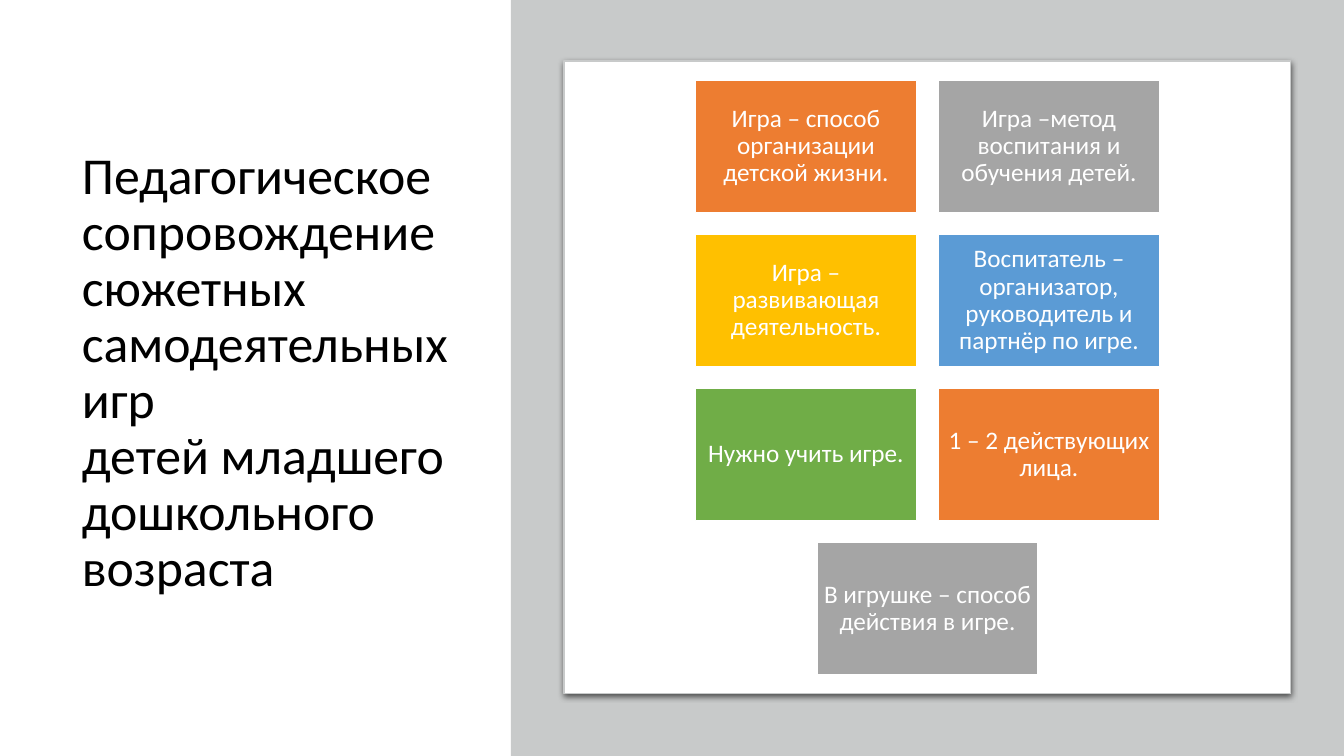
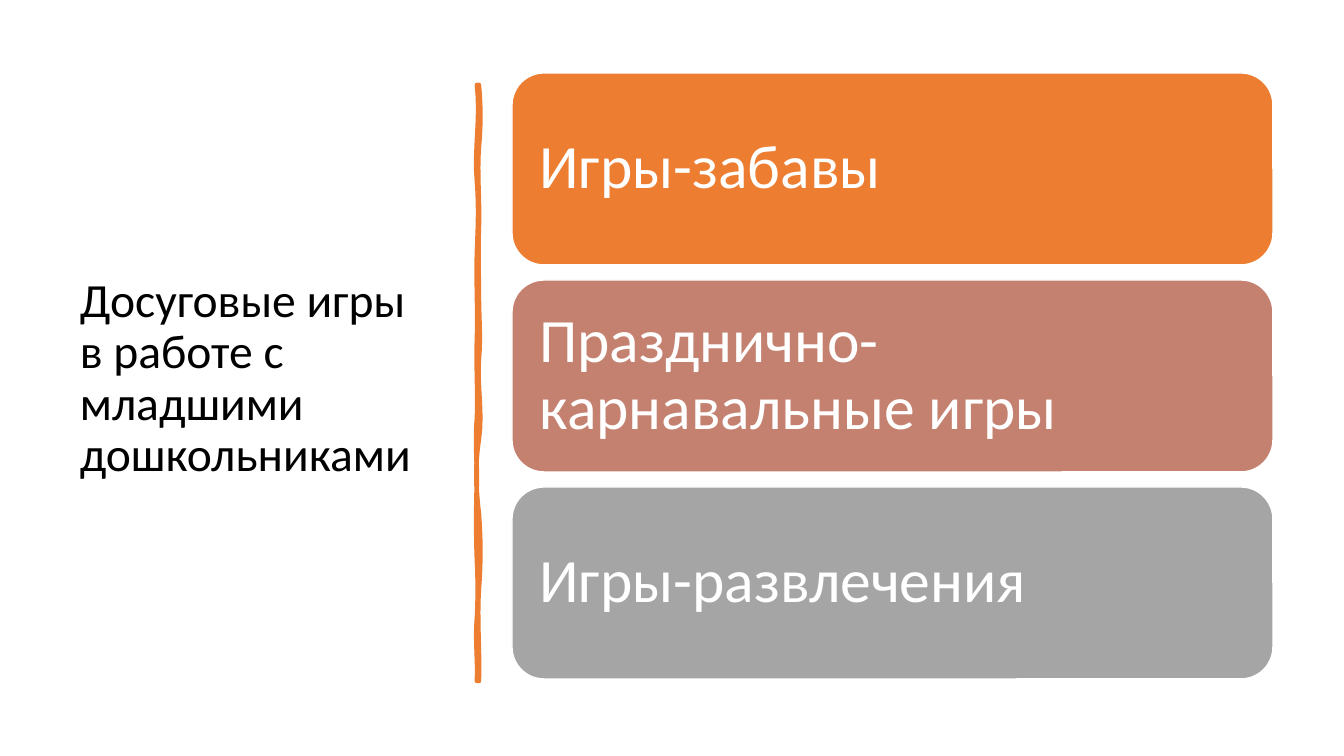
from dataclasses import dataclass

from lxml.etree import SubElement
from pptx import Presentation
from pptx.dml.color import RGBColor
from pptx.enum.shapes import MSO_SHAPE
from pptx.enum.text import MSO_ANCHOR, PP_ALIGN
from pptx.oxml.ns import qn
from pptx.util import Pt

PAGE_WIDTH, PAGE_HEIGHT = 1344, 756
SCALE = 12192000 / PAGE_WIDTH


@dataclass(frozen=True)
class Theme:
    font: str = "Calibri"
    ink: str = "000000"
    white: str = "FFFFFF"
    panel: str = "C8CACA"
    orange: str = "ED7D31"
    gray: str = "A5A5A5"
    gold: str = "FFC000"
    blue: str = "5B9BD5"
    green: str = "70AD47"
    clay: str = "C48170"
    tile_size: int = 18
    bar_size: int = 44
    line_spacing: float = 0.9


THEME = Theme()

PLAY_TITLE = (
    "Педагогическое сопровождение \vсюжетных самодеятельных игр \v"
    "детей младшего дошкольного возраста"
)
PLAY_ROWS = [
    [("Игра – способ организации детской жизни.", THEME.orange),
     ("Игра –метод воспитания и обучения детей.", THEME.gray)],
    [("Игра – развивающая деятельность.", THEME.gold),
     ("Воспитатель – организатор, руководитель и партнёр по игре.", THEME.blue)],
    [("Нужно учить игре.", THEME.green),
     ("1 – 2 действующих лица.", THEME.orange)],
    [("В игрушке – способ действия в игре.", THEME.gray)],
]
PANEL_LEFT = 511
CARD = (564, 61, 727, 633)
TILE_WIDTH, TILE_HEIGHT, TILE_GAP = 221, 132, 22

LEISURE_TITLE = "Досуговые игры \vв работе с младшими дошкольниками"
LEISURE_BARS = [
    ("Игры-забавы", THEME.orange),
    ("Празднично-карнавальные игры", THEME.clay),
    ("Игры-развлечения", THEME.gray),
]
BAR_LEFT, BAR_TOP, BAR_WIDTH, BAR_HEIGHT, BAR_GAP = 512, 73, 761, 192, 15

STROKE_TOP, STROKE_BOTTOM = 85, 681
RIGHT_EDGE = (479, STROKE_TOP, [
    (481, 481, 147), (477, 480, 228), (478, 479, 296), (479, 481, 359),
    (477, 483, 439), (475, 476, 514), (481, 481, 589), (477, 480, STROKE_BOTTOM),
])
LEFT_EDGE = (477, STROKE_BOTTOM, [
    (478, 475, 618), (478, 478, 561), (476, 476, 481), (477, 475, 418),
    (478, 476, 338), (478, 476, 252), (478, 479, 182), (474, 481, STROKE_TOP),
])
CURVE_STEPS = 8


def px(length):
    return round(length * SCALE)


def color(code):
    return RGBColor.from_string(code)


def write(shape, text, size, ink, inset=None, align=PP_ALIGN.LEFT):
    frame = shape.text_frame
    frame.word_wrap = True
    frame.vertical_anchor = MSO_ANCHOR.MIDDLE
    if inset is not None:
        frame.margin_left = frame.margin_right = px(inset)
        frame.margin_top = frame.margin_bottom = px(inset)
    frame.text = text
    for para in frame.paragraphs:
        para.alignment = align
        para.line_spacing = THEME.line_spacing
        for span in para.runs:
            span.font.name = THEME.font
            span.font.size = Pt(size)
            span.font.color.rgb = color(ink)


def style(shape, fill, line=None, line_width=1):
    shape.shadow.inherit = False
    shape.fill.solid()
    shape.fill.fore_color.rgb = color(fill)
    if line:
        shape.line.color.rgb = color(line)
        shape.line.width = Pt(line_width)
    else:
        shape.line.fill.background()


def add_block(page, kind, place, fill, line=None, line_width=1):
    block = page.shapes.add_shape(kind, *map(px, place))
    style(block, fill, line, line_width)
    return block


def add_title(page, place, text, size):
    box = page.shapes.add_textbox(*map(px, place))
    write(box, text, size, THEME.ink)


def add_card_shadow(shape):
    effects = shape.element.spPr.find(qn("a:effectLst"))
    shadow = SubElement(effects, qn("a:outerShdw"), blurRad=str(Pt(4.5)),
                        dist=str(Pt(1.5)), dir="5400000", algn="t", rotWithShape="0")
    tint = SubElement(shadow, qn("a:srgbClr"), val=THEME.ink)
    SubElement(tint, qn("a:alpha"), val="63000")


def edge_points(edge):
    x, y, segments = edge
    points = [(px(x), px(y))]
    for first, second, end in segments:
        for step in range(1, CURVE_STEPS + 1):
            t = step / CURVE_STEPS
            bend = 3 * t * (1 - t) * ((1 - t) * (first - x) + t * (second - x))
            points.append((px(x + bend), px(y + (end - y) * t)))
        y = end
    return points


def add_brush_stroke(page):
    start, *points = edge_points(RIGHT_EDGE) + edge_points(LEFT_EDGE)
    builder = page.shapes.build_freeform(*start, scale=1.0)
    builder.add_line_segments(points, close=True)
    style(builder.convert_to_shape(), THEME.orange, THEME.orange, 3.25)


def build_play_page(page):
    add_title(page, (72, 70, 404, 607), PLAY_TITLE, 37)
    add_block(page, MSO_SHAPE.RECTANGLE,
              (PANEL_LEFT, 0, PAGE_WIDTH - PANEL_LEFT, PAGE_HEIGHT), THEME.panel)
    card = add_block(page, MSO_SHAPE.RECTANGLE, CARD, THEME.white, THEME.panel, 0.75)
    add_card_shadow(card)

    left, top, width, height = CARD
    row_step, column_step = TILE_HEIGHT + TILE_GAP, TILE_WIDTH + TILE_GAP
    grid_top = top + (height - len(PLAY_ROWS) * row_step + TILE_GAP) / 2
    for row, tiles in enumerate(PLAY_ROWS):
        row_left = left + (width - len(tiles) * column_step + TILE_GAP) / 2
        for column, (text, fill) in enumerate(tiles):
            place = (row_left + column * column_step, grid_top + row * row_step,
                     TILE_WIDTH, TILE_HEIGHT)
            tile = add_block(page, MSO_SHAPE.RECTANGLE, place, fill, THEME.white)
            write(tile, text, THEME.tile_size, THEME.white, 7, PP_ALIGN.CENTER)


def build_leisure_page(page):
    add_title(page, (70, 71, 377, 616), LEISURE_TITLE, 34)
    add_brush_stroke(page)
    for index, (text, fill) in enumerate(LEISURE_BARS):
        place = (BAR_LEFT, BAR_TOP + index * (BAR_HEIGHT + BAR_GAP), BAR_WIDTH, BAR_HEIGHT)
        bar = add_block(page, MSO_SHAPE.ROUNDED_RECTANGLE, place, fill, THEME.white)
        write(bar, text, THEME.bar_size, THEME.white, 18)


def main():
    deck = Presentation()
    deck.slide_width, deck.slide_height = px(PAGE_WIDTH), px(PAGE_HEIGHT)
    blank = deck.slide_layouts[6]
    for build in (build_play_page, build_leisure_page):
        build(deck.slides.add_slide(blank))
    deck.save("out.pptx")


if __name__ == "__main__":
    main()
